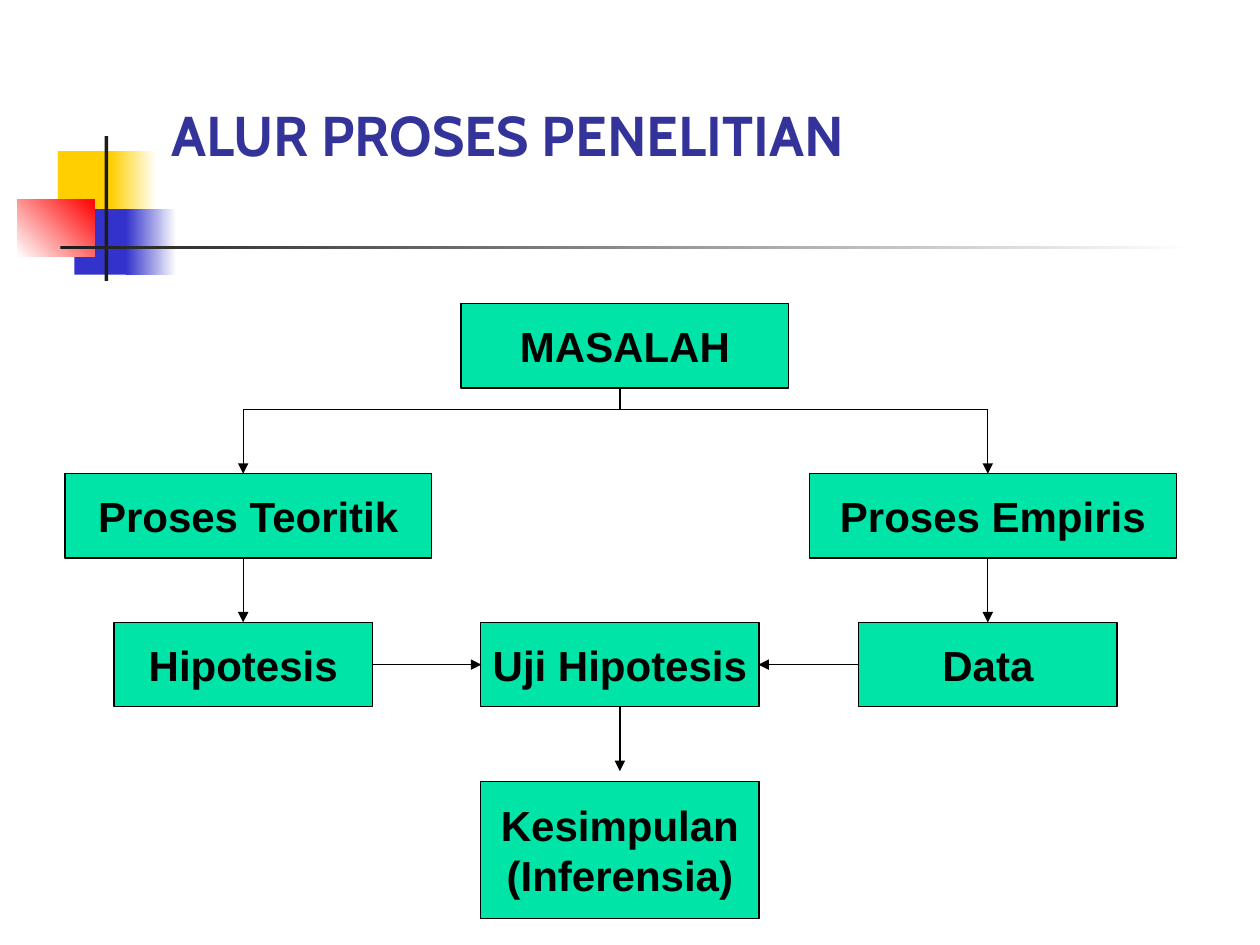
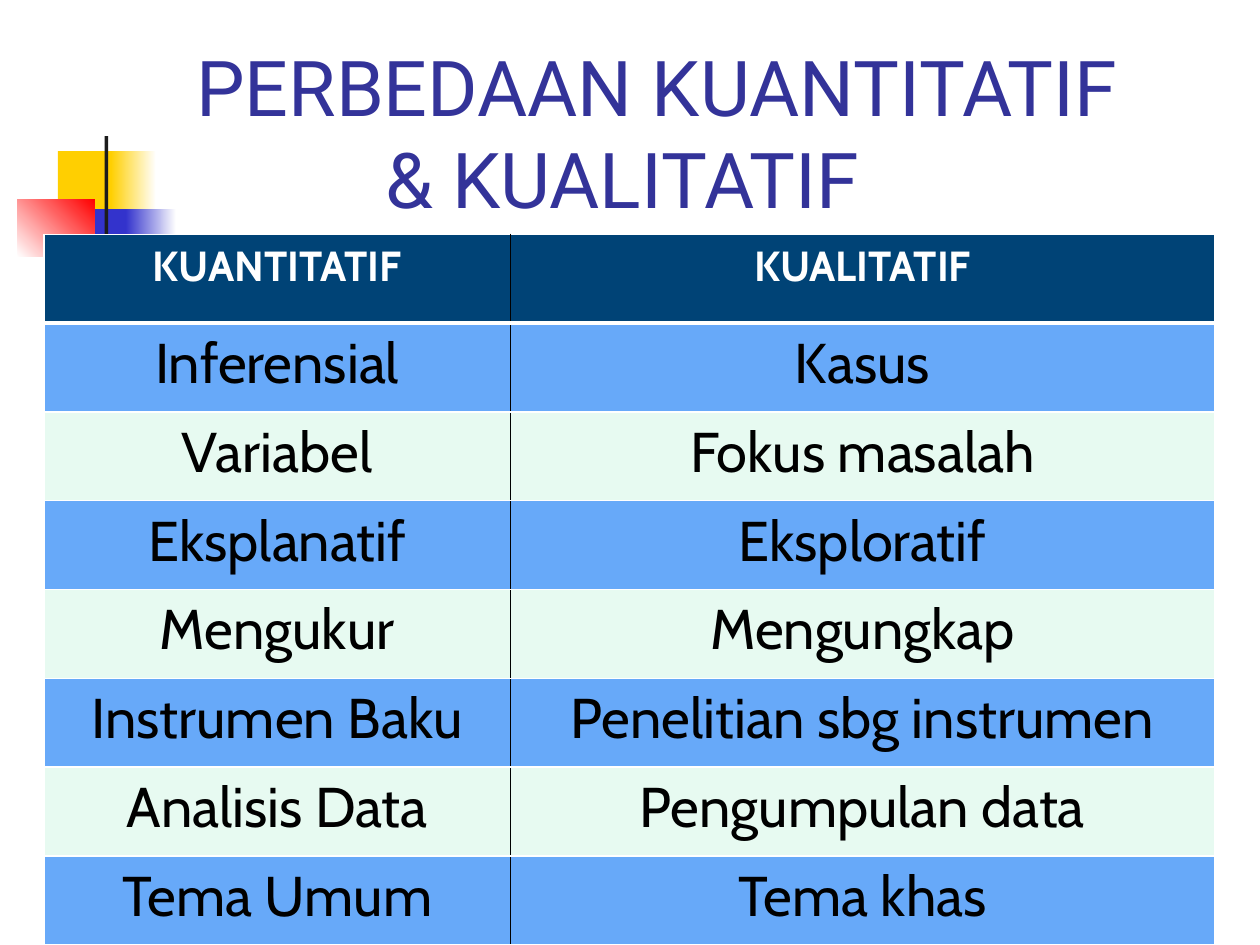
"""Build two slides on the research process and its two approaches."""
import dataclasses

import lxml.etree
import pptx
import pptx.dml.color
import pptx.enum.shapes
import pptx.enum.text
import pptx.oxml.ns
import pptx.util

COLUMNS, ROWS = 10, 7.5
RECTANGLE = pptx.enum.shapes.MSO_SHAPE.RECTANGLE
CENTER = pptx.enum.text.PP_ALIGN.CENTER
ANCHOR = pptx.enum.text.MSO_ANCHOR


@dataclasses.dataclass(frozen=True)
class Theme:
    """Colours, fonts and type sizes of the deck."""

    white: str = "FFFFFF"
    black: str = "000000"
    title: str = "333399"
    yellow: str = "FFCF01"
    blue: str = "3333CC"
    red: str = "FF0000"
    bar: str = "1C1C1C"
    node: str = "00E4A8"
    header: str = "004376"
    bands: tuple = ("67A9F9", "E7FAF1")
    node_font: str = "Arial"
    body_font: str = "Cabin"
    display_font: str = "Roboto"
    small: int = 24
    medium: int = 32
    large: int = 44


THEME = Theme()


def grid(*units):
    """Convert grid units, ten to the slide's width, to lengths."""
    return [pptx.util.Inches(unit) for unit in units]


def rgb(code):
    """Return the colour for a hex code."""
    return pptx.dml.color.RGBColor.from_string(code)


def style(para, font, size, color, bold=False):
    """Set the font of a whole paragraph."""
    para.font.name = font
    para.font.size = pptx.util.Pt(size)
    para.font.color.rgb = rgb(color)
    para.font.bold = bold


def add_block(page, area, color, end=None, angle=0):
    """Add a borderless rectangle, plain or fading to an end colour."""
    block = page.shapes.add_shape(RECTANGLE, *grid(*area))
    block.shadow.inherit = False
    block.line.fill.background()
    if end is None:
        block.fill.solid()
        block.fill.fore_color.rgb = rgb(color)
    else:
        block.fill.gradient()
        block.fill.gradient_angle = angle
        for stop, code in zip(block.fill.gradient_stops, (color, end)):
            stop.color.rgb = rgb(code)
    return block


def add_page(deck):
    """Add a blank page with the shared ornament of blocks and bars."""
    page = deck.slides.add_slide(deck.slide_layouts[6])
    add_block(page, (0.46, 1.2, 0.48, 0.52), THEME.yellow)
    add_block(page, (0.88, 1.2, 0.36, 0.52), THEME.yellow, THEME.white)
    add_block(page, (0.59, 1.66, 0.46, 0.52), THEME.blue)
    add_block(page, (1, 1.66, 0.4, 0.52), THEME.blue, THEME.white)
    add_block(page, (0.14, 1.58, 0.61, 0.46), THEME.white, THEME.red, 45)
    add_block(page, (0.83, 1.08, 0.03, 1.15), THEME.bar)
    add_block(page, (0.48, 1.95, 9, 0.03), THEME.bar, THEME.white)
    return page


def add_title(page, area, lines, font, size, bold=False, indent=0):
    """Add a bottom-anchored title whose later lines are indented."""
    frame = page.shapes.add_textbox(*grid(*area)).text_frame
    frame.word_wrap = True
    frame.vertical_anchor = ANCHOR.BOTTOM
    frame.text = "\n".join(lines)
    for number, para in enumerate(frame.paragraphs):
        style(para, font, size, THEME.title, bold)
        if number:
            para._p.get_or_add_pPr().set("marL", str(grid(indent)[0]))


def add_node(page, text, middle, top, width, height=0.67):
    """Add a flow chart box centred on a column."""
    node = add_block(page, (middle - width / 2, top, width, height), THEME.node)
    node.line.color.rgb = rgb(THEME.black)
    node.line.width = pptx.util.Pt(0.75)
    frame = node.text_frame
    frame.word_wrap = False
    frame.vertical_anchor = ANCHOR.MIDDLE
    frame.text = text
    for para in frame.paragraphs:
        para.alignment = CENTER
        style(para, THEME.node_font, THEME.small, THEME.black, True)


def add_line(page, start, end, arrow=True):
    """Add a straight line, with an arrowhead at its end if wanted."""
    line = page.shapes.add_connector(
        pptx.enum.shapes.MSO_CONNECTOR.STRAIGHT, *grid(*start, *end))
    line.line.width = pptx.util.Pt(0.75)
    line.line.color.rgb = rgb(THEME.black)
    qn = pptx.oxml.ns.qn
    properties = line._element.spPr
    if arrow:
        outline = properties.find(qn("a:ln"))
        lxml.etree.SubElement(outline, qn("a:tailEnd"), type="triangle")
    lxml.etree.SubElement(properties, qn("a:effectLst"))


def set_borders(cell, borders):
    """Set a cell's borders from (side, colour, points) in L, R, T, B order."""
    qn = pptx.oxml.ns.qn
    properties = cell._tc.get_or_add_tcPr()
    for position, (side, color, points) in enumerate(borders):
        line = lxml.etree.Element(qn(f"a:ln{side}"), w=str(pptx.util.Pt(points)))
        fill = lxml.etree.SubElement(line, qn("a:solidFill"))
        lxml.etree.SubElement(fill, qn("a:srgbClr"), val=color)
        properties.insert(position, line)


def add_comparison(page, area, widths, rows):
    """Add a banded two-column table under a dark header row."""
    table = page.shapes.add_table(len(rows), len(widths), *grid(*area)).table
    table.first_row = table.horz_banding = False
    for column, width in zip(table.columns, grid(*widths)):
        column.width = width
    for r, texts in enumerate(rows):
        for c, text in enumerate(texts):
            cell = table.cell(r, c)
            cell.text = text
            cell.fill.solid()
            cell.fill.fore_color.rgb = rgb(THEME.bands[(r - 1) % 2] if r else THEME.header)
            para = cell.text_frame.paragraphs[0]
            para.alignment = CENTER
            if r:
                style(para, THEME.body_font, THEME.medium, THEME.black)
            else:
                style(para, THEME.body_font, THEME.small, THEME.white, True)
            set_borders(cell, [
                ("L", THEME.black if c else THEME.white, 1),
                ("R", THEME.white if c else THEME.black, 1),
                ("T", THEME.white, 3 if r == 1 else 1),
                ("B", THEME.white, 1 if r else 3),
            ])


def build_flow(deck):
    """Build the flow chart of the research process."""
    page = add_page(deck)
    add_title(page, (1.26, 0.23, 8.52, 1.15), ["ALUR PROSES PENELITIAN"],
              THEME.body_font, THEME.medium, bold=True)
    left, middle, right = 1.93, 4.92, 7.84
    problem, fork, process, evidence, conclusion = 2.41, 3.25, 3.76, 4.94, 6.2
    height, drop = 0.67, 0.51
    add_node(page, "MASALAH", middle + 0.04, problem, 2.6)
    add_node(page, "Uji Hipotesis", middle, evidence, 2.21)
    add_node(page, "Kesimpulan\n(Inferensia)", middle, conclusion, 2.21, 1.09)
    add_line(page, (middle, problem + height), (middle, fork), arrow=False)
    add_line(page, (left, fork), (right, fork), arrow=False)
    test_bottom = evidence + height
    add_line(page, (middle, test_bottom), (middle, test_bottom + drop))
    branches = [(left, 1, "Proses Teoritik", "Hipotesis"),
                (right, -1, "Proses Empiris", "Data")]
    for center, inward, activity, result in branches:
        add_node(page, activity, center + 0.04, process, 2.91)
        add_node(page, result, center, evidence, 2.05)
        for start in (fork, process + height):
            add_line(page, (center, start), (center, start + drop))
        level = evidence + height / 2
        add_line(page, (center + inward * 1.02, level),
                 (middle - inward * 1.1, level))


def build_comparison(deck):
    """Build the table of quantitative against qualitative research."""
    page = add_page(deck)
    add_title(page, (1.46, 0.23, 8.32, 1.6),
              ["PERBEDAAN KUANTITATIF", "& KUALITATIF"],
              THEME.display_font, THEME.large, indent=1.5)
    add_comparison(page, (0.35, 1.86, 9.29, 5.64), (3.7, 5.59), [
        ("KUANTITATIF", "KUALITATIF"),
        ("Inferensial", "Kasus"),
        ("Variabel", "Fokus masalah"),
        ("Eksplanatif", "Eksploratif"),
        ("Mengukur", "Mengungkap"),
        ("Instrumen Baku", "Penelitian sbg instrumen"),
        ("Analisis Data", "Pengumpulan data"),
        ("Tema Umum", "Tema khas"),
    ])


def main():
    """Build and save the deck."""
    deck = pptx.Presentation()
    deck.slide_width, deck.slide_height = grid(COLUMNS, ROWS)
    build_flow(deck)
    build_comparison(deck)
    deck.save("out.pptx")


if __name__ == "__main__":
    main()
